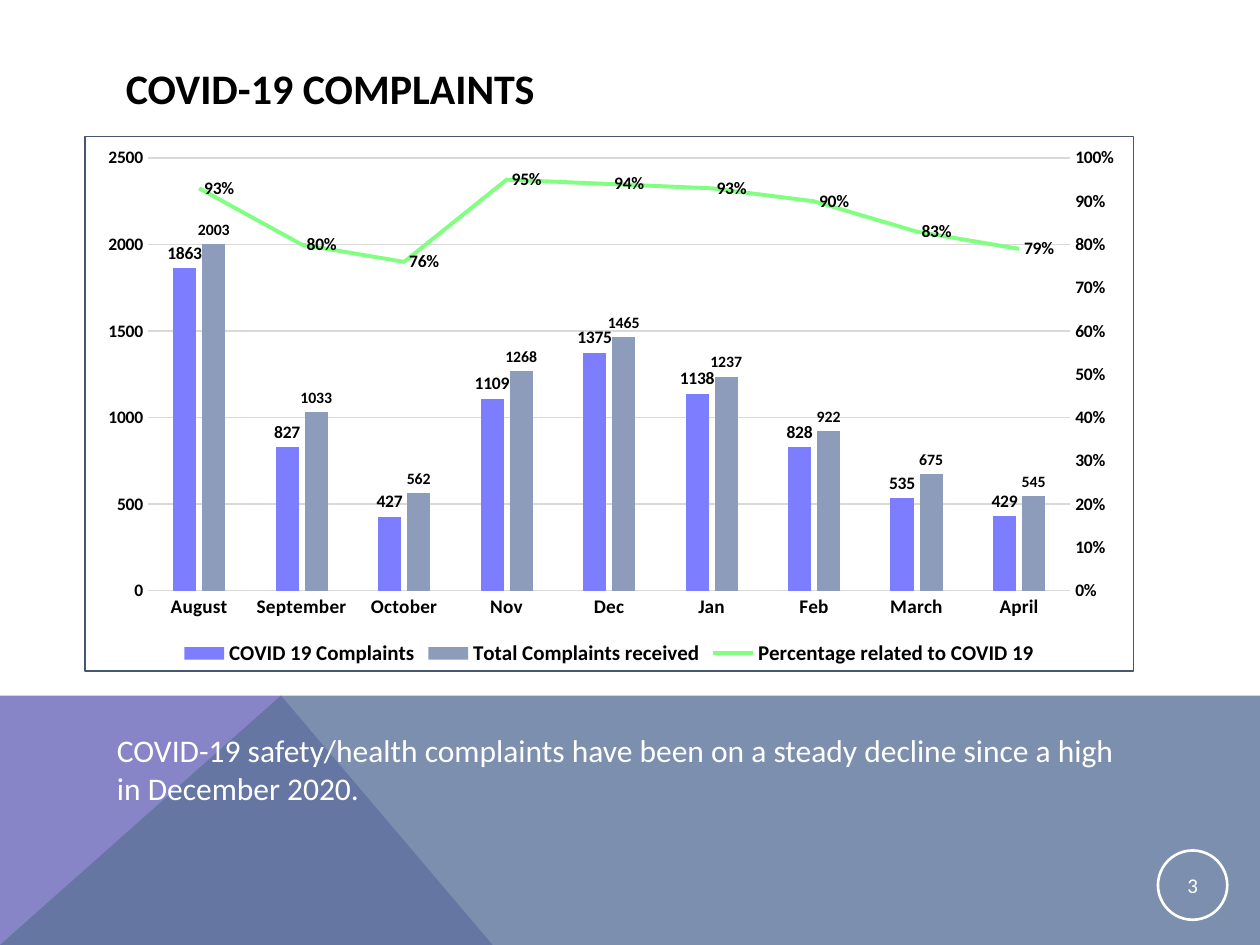
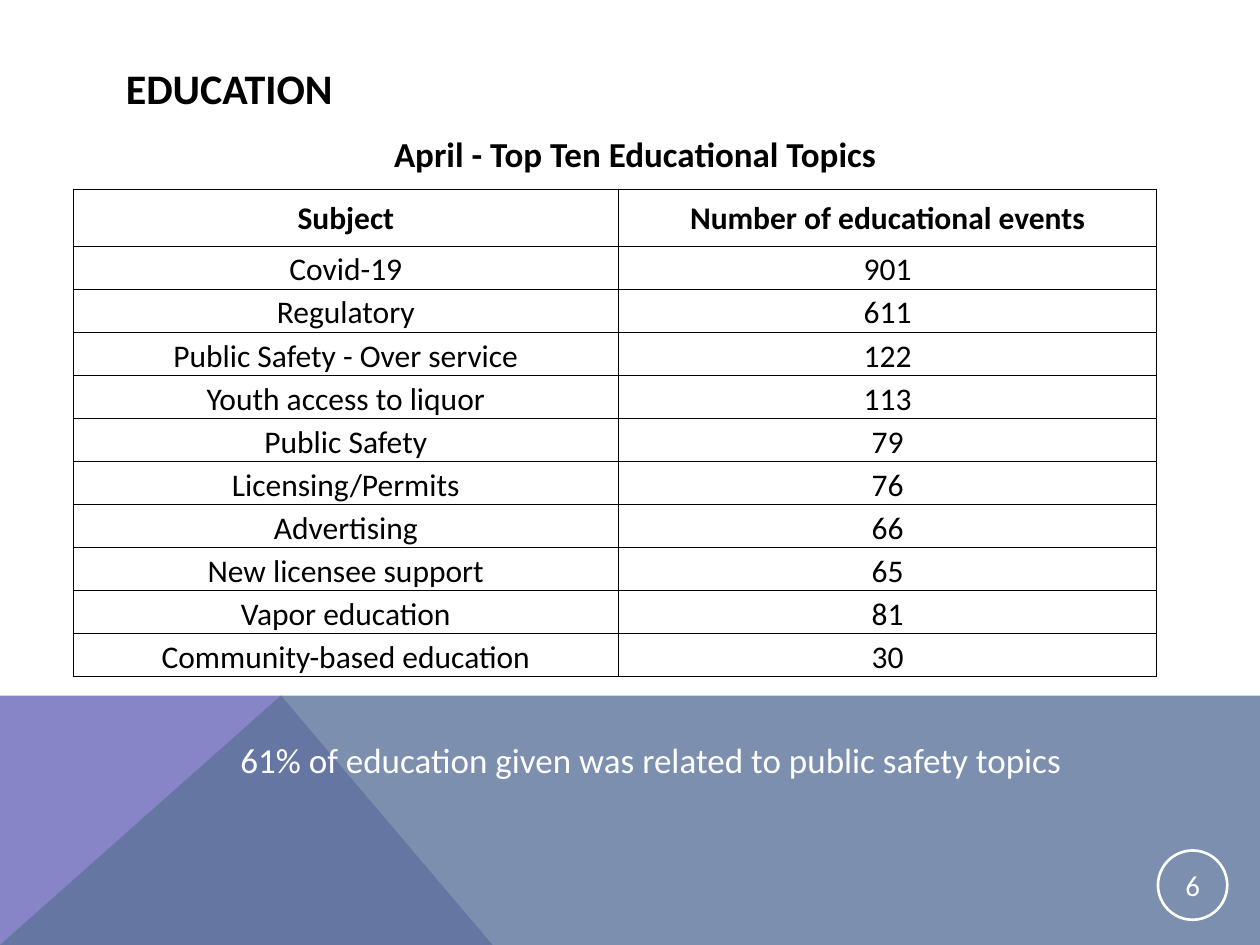
from copy import deepcopy

from lxml import etree
from pptx import Presentation
from pptx import util as u
from pptx.chart import axis as chart_axis
from pptx.chart.data import CategoryChartData
from pptx.dml.color import RGBColor
from pptx.enum import chart as charts, shapes, text
from pptx.oxml import parse_xml
from pptx.oxml.ns import nsdecls, qn


class Theme:
    font = "Calibri"
    black = RGBColor.from_string("000000")
    white = RGBColor.from_string("FFFFFF")
    violet = RGBColor.from_string("8784C7")
    slate = RGBColor.from_string("5D739A")
    slate_alpha = 80000
    frame = "465673"
    gridline = RGBColor.from_string("D9D9D9")
    covid = RGBColor.from_string("7D7DFF")
    total = RGBColor.from_string("8C9CBA")
    share = RGBColor.from_string("81FF81")
    title = 24
    heading = 20
    body = 18
    legend = 12
    months = 11
    values = 10
    small_values = 9


deck = Presentation()
deck.slide_width, deck.slide_height = u.Inches(10), u.Inches(7.5)
COLUMNS, ROWS = 100, 75
column = deck.slide_width / COLUMNS
row = deck.slide_height / ROWS


def grid(left, top, width, height):
    return [u.Emu(round(n * unit)) for n, unit in zip((left, top, width, height), (column, row) * 2)]


def write(frame, words, size, color, bold=False, align=text.PP_ALIGN.LEFT,
          anchor=text.MSO_ANCHOR.TOP, wrap=True):
    frame.text = words
    frame.word_wrap = wrap
    frame.vertical_anchor = anchor
    for paragraph in frame.paragraphs:
        paragraph.alignment = align
        for run in paragraph.runs:
            run.font.name, run.font.size, run.font.bold = Theme.font, u.Pt(size), bold
            run.font.color.rgb = color


BAND_TOP = 55.2
bands = [
    ([(0, ROWS), (0, BAND_TOP), (22.3, BAND_TOP), (39.1, ROWS)], Theme.violet, None),
    ([(0, ROWS), (22.3, BAND_TOP), (COLUMNS, BAND_TOP), (COLUMNS, ROWS)], Theme.slate, Theme.slate_alpha),
]
pages = []
for title, page_number, number_size in [("COVID-19 COMPLAINTS", "3", 12), ("EDUCATION", "6", 16.5)]:
    page = deck.slides.add_slide(deck.slide_layouts[6])
    for corners, color, alpha in bands:
        points = [(round(x * column), round(y * row)) for x, y in corners]
        outline = page.shapes.build_freeform(*points[0])
        outline.add_line_segments(points[1:], close=True)
        band = outline.convert_to_shape()
        band.shadow.inherit = False
        band.fill.solid()
        band.fill.fore_color.rgb = color
        band.line.fill.background()
        if alpha:
            tint = band.fill._xPr.find(".//" + qn("a:srgbClr"))
            etree.SubElement(tint, qn("a:alpha"), val=str(alpha))
    heading = page.shapes.add_textbox(*grid(9, 4, 82.2, 6))
    write(heading.text_frame, title, Theme.title, Theme.black, True, anchor=text.MSO_ANCHOR.MIDDLE)
    badge = page.shapes.add_shape(shapes.MSO_SHAPE.OVAL, *grid(91.9, 67.5, 5.5, 5.5))
    badge.shadow.inherit = False
    badge.fill.background()
    badge.line.color.rgb, badge.line.width = Theme.white, u.Pt(1.5)
    inside = badge.text_frame
    inside.margin_left = inside.margin_right = inside.margin_top = inside.margin_bottom = u.Inches(0.01)
    write(inside, page_number, number_size, Theme.white,
          align=text.PP_ALIGN.CENTER, anchor=text.MSO_ANCHOR.MIDDLE)
    pages.append(page)
complaints, education = pages

figures = CategoryChartData()
figures.categories = ["August", "September", "October", "Nov", "Dec", "Jan", "Feb", "March", "April"]
figures.add_series("COVID 19 Complaints", [1863, 827, 427, 1109, 1375, 1138, 828, 535, 429])
figures.add_series("Total Complaints received", [2003, 1033, 562, 1268, 1465, 1237, 922, 675, 545])
figures.add_series("Percentage related to COVID 19",
                   [0.93, 0.8, 0.76, 0.95, 0.94, 0.93, 0.9, 0.83, 0.79], "0%")
chart = complaints.shapes.add_chart(
    charts.XL_CHART_TYPE.COLUMN_CLUSTERED, *grid(6.7, 10.8, 83.3, 42.5), figures).chart
chart.has_title = False
chart.has_legend = True
chart.legend.position = charts.XL_LEGEND_POSITION.BOTTOM
chart.legend.include_in_layout = False
bars = chart.plots[0]
bars.gap_width, bars.overlap, bars.vary_by_categories = 219, -27, False

months, counts = chart.category_axis, chart.value_axis
counts.minimum_scale, counts.maximum_scale, counts.major_unit = 0, 2500, 500
counts.has_major_gridlines = True
counts.major_gridlines.format.line.color.rgb = Theme.gridline
counts.major_gridlines.format.line.width = u.Pt(0.75)
counts.format.line.fill.background()
months.format.line.color.rgb = Theme.gridline
months.format.line.width = u.Pt(0.75)
for axis in (months, counts):
    axis.major_tick_mark = axis.minor_tick_mark = charts.XL_TICK_MARK.NONE

fonts = [(chart.font, Theme.values, False), (chart.legend.font, Theme.legend, True),
         (months.tick_labels.font, Theme.months, True), (counts.tick_labels.font, Theme.values, True)]
outside, right = charts.XL_LABEL_POSITION.OUTSIDE_END, charts.XL_LABEL_POSITION.RIGHT

plot_area = chart._chartSpace.find(".//" + qn("c:plotArea"))
bar_plot = plot_area.find(qn("c:barChart"))
share_series = bar_plot.findall(qn("c:ser"))[2]
for bar_only in share_series.findall(qn("c:invertIfNegative")):
    share_series.remove(bar_only)
line_plot = parse_xml(
    f'<c:lineChart {nsdecls("c")}><c:grouping val="standard"/><c:varyColors val="0"/>'
    '<c:marker val="1"/><c:axId val="501"/><c:axId val="502"/></c:lineChart>')
line_plot.insert(2, share_series)
bar_plot.addnext(line_plot)

for series, color, size, place in zip(
        [*bars.series, *chart.plots[1].series], (Theme.covid, Theme.total, Theme.share),
        (Theme.values, Theme.small_values, Theme.values), (outside, outside, right)):
    if place == right:
        series.format.line.color.rgb, series.format.line.width = color, u.Pt(2.25)
        series.marker.style = charts.XL_MARKER_STYLE.NONE
        series.smooth = False
        series.data_labels.number_format = "0%"
        series.data_labels.number_format_is_linked = False
    else:
        series.format.fill.solid()
        series.format.fill.fore_color.rgb = color
    series.data_labels.show_value = True
    series.data_labels.position = place
    fonts.append((series.data_labels.font, size, True))
for font, size, bold in fonts:
    font.name, font.size, font.bold = Theme.font, u.Pt(size), bold
    font.color.rgb = Theme.black

hidden_months, percents = deepcopy(months._element), deepcopy(counts._element)
for element, own, partner in ((hidden_months, "501", "502"), (percents, "502", "501")):
    element.find(qn("c:axId")).set("val", own)
    element.find(qn("c:crossAx")).set("val", partner)
counts._element.addnext(percents)
percents.addnext(hidden_months)
percents.find(qn("c:axPos")).set("val", "r")
percents.find(qn("c:crosses")).set("val", "max")
chart_axis.CategoryAxis(hidden_months).visible = False
percent_axis = chart_axis.ValueAxis(percents)
percent_axis.has_major_gridlines = False
percent_axis.maximum_scale, percent_axis.major_unit = 1, 0.1
percent_axis.tick_labels.number_format = "0%"
percent_axis.tick_labels.number_format_is_linked = False

for unset in plot_area.findall(qn("c:layout")):
    plot_area.remove(unset)
plot_area.insert(0, parse_xml(
    f'<c:layout {nsdecls("c")}><c:manualLayout><c:layoutTarget val="inner"/>'
    '<c:xMode val="edge"/><c:yMode val="edge"/><c:x val="0.06"/><c:y val="0.04"/>'
    '<c:w val="0.88"/><c:h val="0.81"/></c:manualLayout></c:layout>'))
chart._chartSpace.find(qn("c:chart")).addnext(parse_xml(
    f'<c:spPr {nsdecls("c", "a")}><a:noFill/><a:ln w="9525"><a:solidFill>'
    f'<a:srgbClr val="{Theme.frame}"/></a:solidFill></a:ln></c:spPr>'))

trend = complaints.shapes.add_textbox(*grid(8.3, 57.5, 86.2, 7.1))
write(trend.text_frame,
      "COVID-19 safety/health complaints have been on a steady decline since a high\nin December 2020.",
      Theme.body, Theme.white)

topics = [
    ("Subject", "Number of educational events"),
    ("Covid-19", "901"),
    ("Regulatory", "611"),
    ("Public Safety - Over service", "122"),
    ("Youth access to liquor", "113"),
    ("Public Safety", "79"),
    ("Licensing/Permits", "76"),
    ("Advertising", "66"),
    ("New licensee support", "65"),
    ("Vapor education", "81"),
    ("Community-based education", "30"),
]
table = education.shapes.add_table(len(topics), 2, *grid(5.8, 15, 86, 38.7)).table
table.first_row = table.horz_banding = False
for table_column, width in zip(table.columns, (43.3, 42.7)):
    table_column.width = u.Emu(round(width * column))
for index, topic in enumerate(topics):
    header = index == 0
    table.rows[index].height = u.Emu(round((4.55 if header else 3.42) * row))
    for cell, words in zip(table.rows[index].cells, topic):
        cell.margin_left = cell.margin_right = cell.margin_top = u.Inches(0.01)
        cell.margin_bottom = 0
        cell.vertical_anchor = text.MSO_ANCHOR.MIDDLE if header else text.MSO_ANCHOR.BOTTOM
        cell.text = words
        paragraph = cell.text_frame.paragraphs[0]
        paragraph.alignment = text.PP_ALIGN.CENTER
        font = paragraph.runs[0].font
        font.name, font.size, font.bold = Theme.font, u.Pt(Theme.body), header
        font.color.rgb = Theme.black
        cell.fill.solid()
        cell.fill.fore_color.rgb = Theme.white
        for position, side in enumerate("LRTB"):
            cell._tc.get_or_add_tcPr().insert(position, parse_xml(
                f'<a:ln{side} {nsdecls("a")} w="6350"><a:solidFill>'
                f'<a:srgbClr val="{Theme.black}"/></a:solidFill></a:ln{side}>'))

subtitle = education.shapes.add_textbox(*grid(15, 10, 70.8, 4.4))
write(subtitle.text_frame, "April - Top Ten Educational Topics", Theme.heading, Theme.black, True,
      text.PP_ALIGN.CENTER)
finding = education.shapes.add_textbox(*grid(18.1, 58.1, 67.3, 4.4))
write(finding.text_frame, "61% of education given was related to public safety topics",
      Theme.heading, Theme.white, wrap=False)

deck.save("out.pptx")
